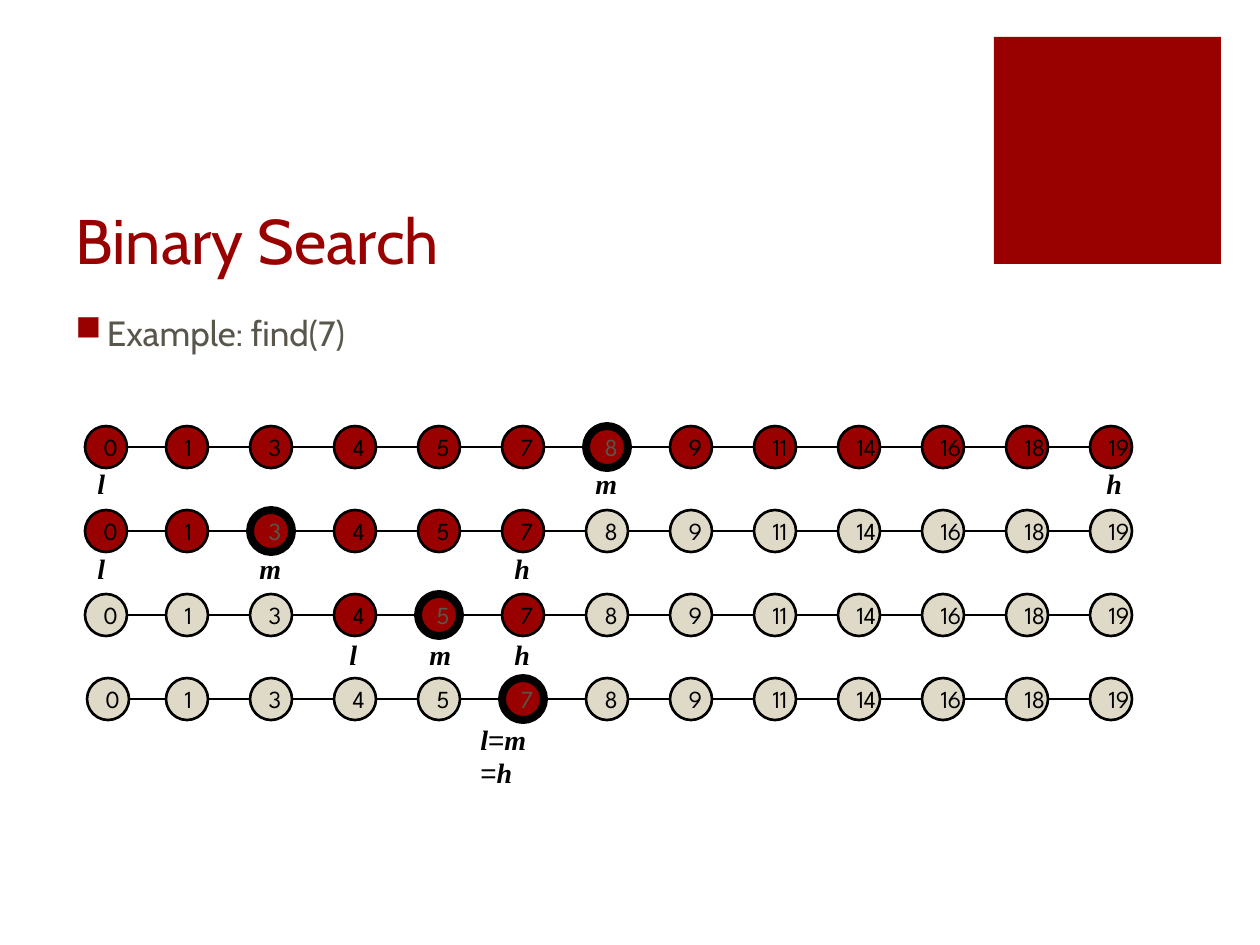
from dataclasses import dataclass
from typing import Optional

from lxml import etree
from pptx import Presentation
from pptx.dml.color import RGBColor
from pptx.enum.shapes import MSO_CONNECTOR, MSO_SHAPE
from pptx.enum.text import MSO_ANCHOR, MSO_AUTO_SIZE, PP_ALIGN
from pptx.oxml.ns import qn
from pptx.util import Emu, Pt

RECT, OVAL = MSO_SHAPE.RECTANGLE, MSO_SHAPE.OVAL
LINE = MSO_CONNECTOR.STRAIGHT
TOP, MID, LOW = MSO_ANCHOR.TOP, MSO_ANCHOR.MIDDLE, MSO_ANCHOR.BOTTOM
LEFT = PP_ALIGN.LEFT
GROW, FIXED = MSO_AUTO_SIZE.SHAPE_TO_FIT_TEXT, MSO_AUTO_SIZE.NONE

RED, SAND, GRAY, BLACK = "990000", "DFDAC7", "59564B", "000000"
VALUES = (0, 1, 3, 4, 5, 7, 8, 9, 11, 14, 16, 18, 19)
SIZE, STEP = 42, 84
FIRST, TOP_ROW = 166, 426


@dataclass(frozen=True)
class Run:
    """Text with its font."""
    text: str
    size: int
    font: str
    color: str = BLACK
    strong: bool = False


@dataclass(frozen=True)
class Label:
    """Name of a search bound and its box."""
    text: str
    left: int
    width: int
    wrap: bool = False


@dataclass(frozen=True)
class Row:
    """One step of the search: live range, middle and labels."""
    live: range
    mid: int
    head: int
    start: int
    drop: int
    labels: tuple[Label, ...]


ROWS = (
    Row(range(0, 13), 6, 85, 127, 460,
        (Label("m", 583, 48), Label("l", 85, 33), Label("h", 1094, 40))),
    Row(range(0, 6), 2, 85, 106, 545,
        (Label("m", 247, 48), Label("l", 85, 33), Label("h", 502, 40))),
    Row(range(3, 6), 4, 85, 117, 631,
        (Label("m", 417, 48), Label("l", 337, 33), Label("h", 502, 42, True))),
    Row(range(5, 6), 5, 87, 128, 716,
        (Label("l=m =h", 468, 108, True),)),
)


def px(count: int) -> Emu:
    """Turn pixels into EMU."""
    return Emu(round(count * 914400 / 126))


def tint(code: str) -> RGBColor:
    """Turn a hex string into a colour."""
    return RGBColor.from_string(code)


def write(shape, runs: list[Run], anchor=TOP, wrap: bool = True, fit=FIXED):
    """Fill the first paragraph of a shape run by run."""
    frame = shape.text_frame
    frame.auto_size = fit
    frame.word_wrap = wrap
    frame.vertical_anchor = anchor
    para = frame.paragraphs[0]
    para.alignment = LEFT
    for part in runs:
        run = para.add_run()
        run.text = part.text
        font = run.font
        font.size, font.name = Pt(part.size), part.font
        font.bold = font.italic = part.strong
        font.color.rgb = tint(part.color)
    return para


def box(shapes, left: int, top: int, width: int, height: int):
    """Add an empty text box."""
    return shapes.add_textbox(px(left), px(top), px(width), px(height))


def draw(shapes, kind, left: int, top: int, side: int, fill: str,
         weight: Optional[float] = None):
    """Add a filled shape as wide as it is high."""
    shape = shapes.add_shape(kind, px(left), px(top), px(side), px(side))
    shape.shadow.inherit = False
    shape.fill.solid()
    shape.fill.fore_color.rgb = tint(fill)
    if weight is None:
        shape.line.fill.background()
    else:
        shape.line.color.rgb = tint(BLACK)
        shape.line.width = Pt(weight)
    return shape


def bullet(para) -> None:
    """Give a paragraph a red square bullet."""
    props = para._p.get_or_add_pPr()
    props.set("marL", "228600")
    props.set("indent", "-228600")
    hue = etree.SubElement(props, qn("a:buClr"))
    etree.SubElement(hue, qn("a:srgbClr"), val=RED)
    etree.SubElement(props, qn("a:buChar"), char="■")


def chain(shapes, row: Row, top: int) -> None:
    """Draw the line and nodes of one step."""
    level = px(top + SIZE // 2)
    end = FIRST + STEP * (len(VALUES) - 2)
    line = shapes.add_connector(LINE, px(row.start), level, px(end), level)
    line.line.color.rgb = tint(BLACK)
    line.line.width = Pt(1.5)
    etree.SubElement(line._element.spPr, qn("a:effectLst"))
    for spot, value in enumerate(VALUES):
        left = FIRST + STEP * (spot - 1) if spot else row.head
        fill = RED if spot in row.live else SAND
        weight, ink = (4.5, GRAY) if spot == row.mid else (1.5, BLACK)
        node = draw(shapes, OVAL, left, top, SIZE, fill, weight)
        write(node, [Run(str(value), 14, "League Spartan", ink)], MID, False)


def split(text: str) -> list[Run]:
    """Set equal signs plain and names in bold italics."""
    parts = text.replace("=", "|=|").split("|")
    return [Run(part, 16, "Arial") if part == "="
            else Run(part, 16, "Times New Roman", strong=True)
            for part in parts]


def name(shapes, row: Row) -> None:
    """Write the bounds below one step."""
    for label in row.labels:
        shape = box(shapes, label.left, row.drop, label.width, 47)
        write(shape, split(label.text), wrap=label.wrap, fit=GROW)


def main() -> None:
    """Build and save the slide."""
    deck = Presentation()
    deck.slide_width, deck.slide_height = px(1260), px(945)
    shapes = deck.slides.add_slide(deck.slide_layouts[6]).shapes
    draw(shapes, RECT, 994, 37, 227, RED)
    write(box(shapes, 63, 126, 897, 157),
          [Run("Binary Search", 36, "Cabin", RED)], LOW)
    para = write(box(shapes, 63, 305, 897, 539),
                 [Run("Example: find(7)", 20, "Cabin", GRAY)])
    para.space_before = Pt(18)
    bullet(para)
    for rank, row in enumerate(ROWS):
        chain(shapes, row, TOP_ROW + STEP * rank)
    for row in ROWS:
        name(shapes, row)
    deck.save("out.pptx")


if __name__ == "__main__":
    main()
